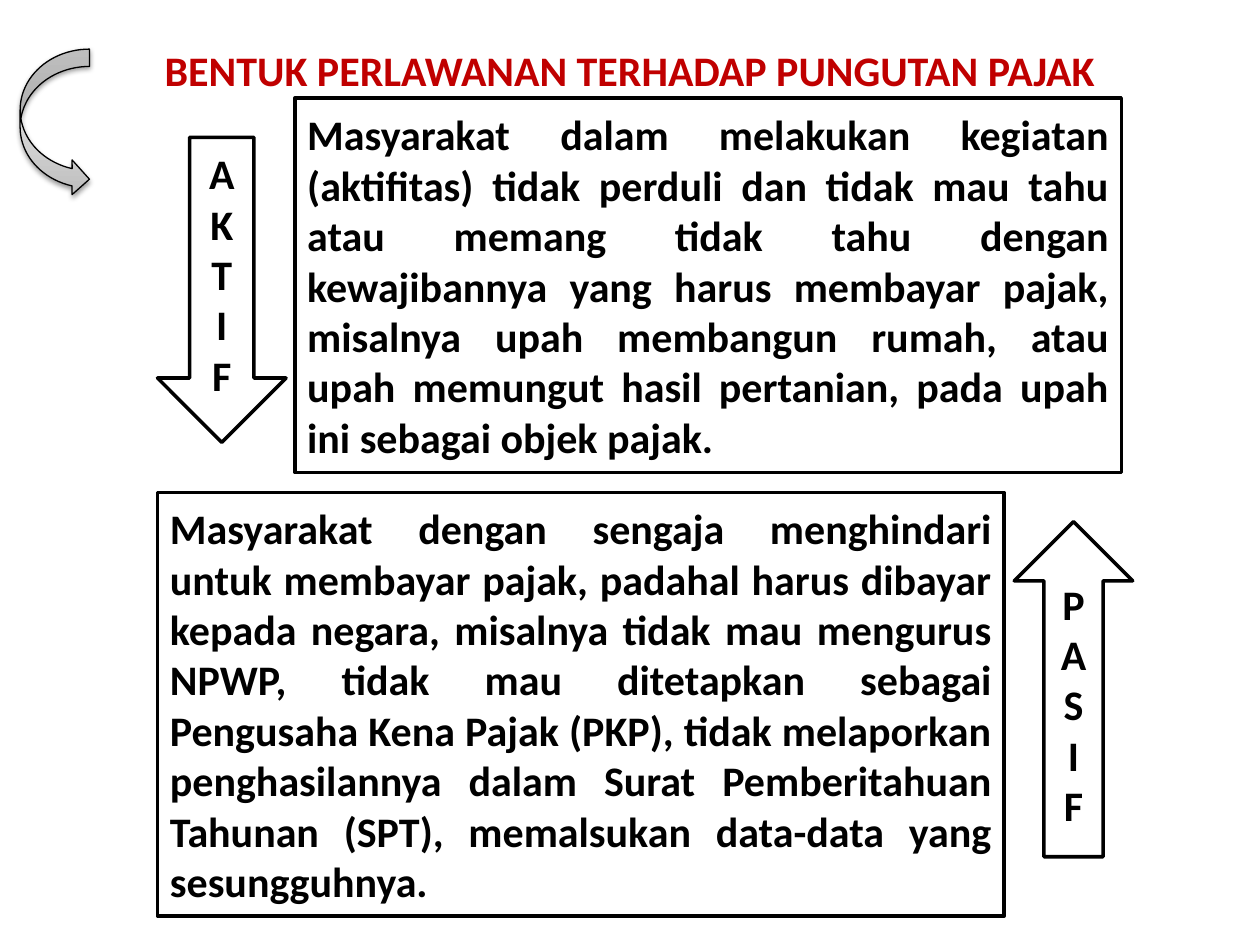
from pptx import Presentation
from pptx.dml.color import RGBColor
from pptx.enum.shapes import MSO_SHAPE
from pptx.enum.text import MSO_ANCHOR, PP_ALIGN
from pptx.oxml import parse_xml
from pptx.oxml.ns import nsdecls
from pptx.util import Inches, Pt

RECT = MSO_SHAPE.RECTANGLE
DOWN, UP = MSO_SHAPE.DOWN_ARROW, MSO_SHAPE.UP_ARROW
CURVE = MSO_SHAPE.CURVED_RIGHT_ARROW
CENTER, JUSTIFY = PP_ALIGN.CENTER, PP_ALIGN.JUSTIFY
MIDDLE = MSO_ANCHOR.MIDDLE

COLORS = {"red": "C00000", "black": "000000", "white": "FFFFFF",
          "dark": "BDBDBD", "mid": "D1D1D1", "light": "EEEEEE"}

ACTIVE = ("Masyarakat dalam melakukan kegiatan (aktifitas) tidak perduli dan "
          "tidak mau tahu atau memang tidak tahu dengan kewajibannya yang harus "
          "membayar pajak, misalnya upah membangun rumah, atau upah memungut "
          "hasil pertanian, pada upah ini sebagai objek pajak.")
PASSIVE = ("Masyarakat dengan sengaja menghindari untuk membayar pajak, padahal "
           "harus dibayar kepada negara, misalnya tidak mau mengurus NPWP, tidak "
           "mau ditetapkan sebagai Pengusaha Kena Pajak (PKP), tidak melaporkan "
           "penghasilannya dalam Surat Pemberitahuan Tahunan (SPT), memalsukan "
           "data-data yang sesungguhnya.")


def color(name):
    return RGBColor.from_string(COLORS[name])


def write(shape, text, align, tone="black"):
    frame = shape.text_frame
    frame.text = text
    frame.word_wrap = True
    frame.vertical_anchor = MIDDLE
    for para in frame.paragraphs:
        para.alignment = align
        for run in para.runs:
            font = run.font
            font.name, font.size, font.bold = "Calibri", Pt(24), True
            font.color.rgb = color(tone)


def add_shape(slide, kind, box, width):
    shape = slide.shapes.add_shape(kind, *map(Inches, box))
    shape.shadow.inherit = False
    shape.line.color.rgb = color("black")
    shape.line.width = Pt(width)
    return shape


def add_title(slide, box):
    title = slide.shapes.title
    title.left, title.top, title.width, title.height = map(Inches, box)
    write(title, "BENTUK PERLAWANAN TERHADAP PUNGUTAN PAJAK", CENTER, "red")


def add_curve(slide, box):
    arrow = add_shape(slide, CURVE, box, 0.75)
    props = arrow._element.spPr
    # Three-stop gradient, dark at the bottom
    stops = "".join(
        f'<a:gs pos="{pos * 1000}"><a:srgbClr val="{COLORS[name]}"/></a:gs>'
        for pos, name in ((0, "dark"), (35, "mid"), (100, "light")))
    props.insert_element_before(parse_xml(
        f'<a:gradFill {nsdecls("a")} rotWithShape="1"><a:gsLst>{stops}</a:gsLst>'
        '<a:lin ang="16200000" scaled="0"/></a:gradFill>'), "a:ln")
    # Soft shadow below
    effects = props.find("{*}effectLst")
    effects.append(parse_xml(
        f'<a:outerShdw {nsdecls("a")} blurRad="{Pt(3.1)}" dist="{Pt(1.6)}" '
        f'dir="5400000" rotWithShape="0"><a:srgbClr val="{COLORS["black"]}">'
        '<a:alpha val="38000"/></a:srgbClr></a:outerShdw>'))


def add_panel(slide, kind, box, text, align):
    shape = add_shape(slide, kind, box, 2)
    shape.fill.solid()
    shape.fill.fore_color.rgb = color("white")
    write(shape, text, align)


def main():
    deck = Presentation()
    deck.slide_width, deck.slide_height = Inches(10), Inches(7.5)
    slide = deck.slides.add_slide(deck.slide_layouts[5])

    add_title(slide, (0.5, 0.16, 9, 0.78))
    add_curve(slide, (0.16, 0.39, 0.55, 1.17))
    # Explanations, then the arrows that name them
    add_panel(slide, RECT, (2.34, 0.78, 6.56, 2.97), ACTIVE, JUSTIFY)
    add_panel(slide, RECT, (1.25, 3.91, 6.72, 3.36), PASSIVE, JUSTIFY)
    add_panel(slide, DOWN, (1.25, 1.09, 1.02, 2.42), "\n".join("AKTIF"), CENTER)
    add_panel(slide, UP, (8.05, 4.14, 0.94, 2.66), "P\vA S I F", CENTER)

    deck.save("out.pptx")


if __name__ == "__main__":
    main()
